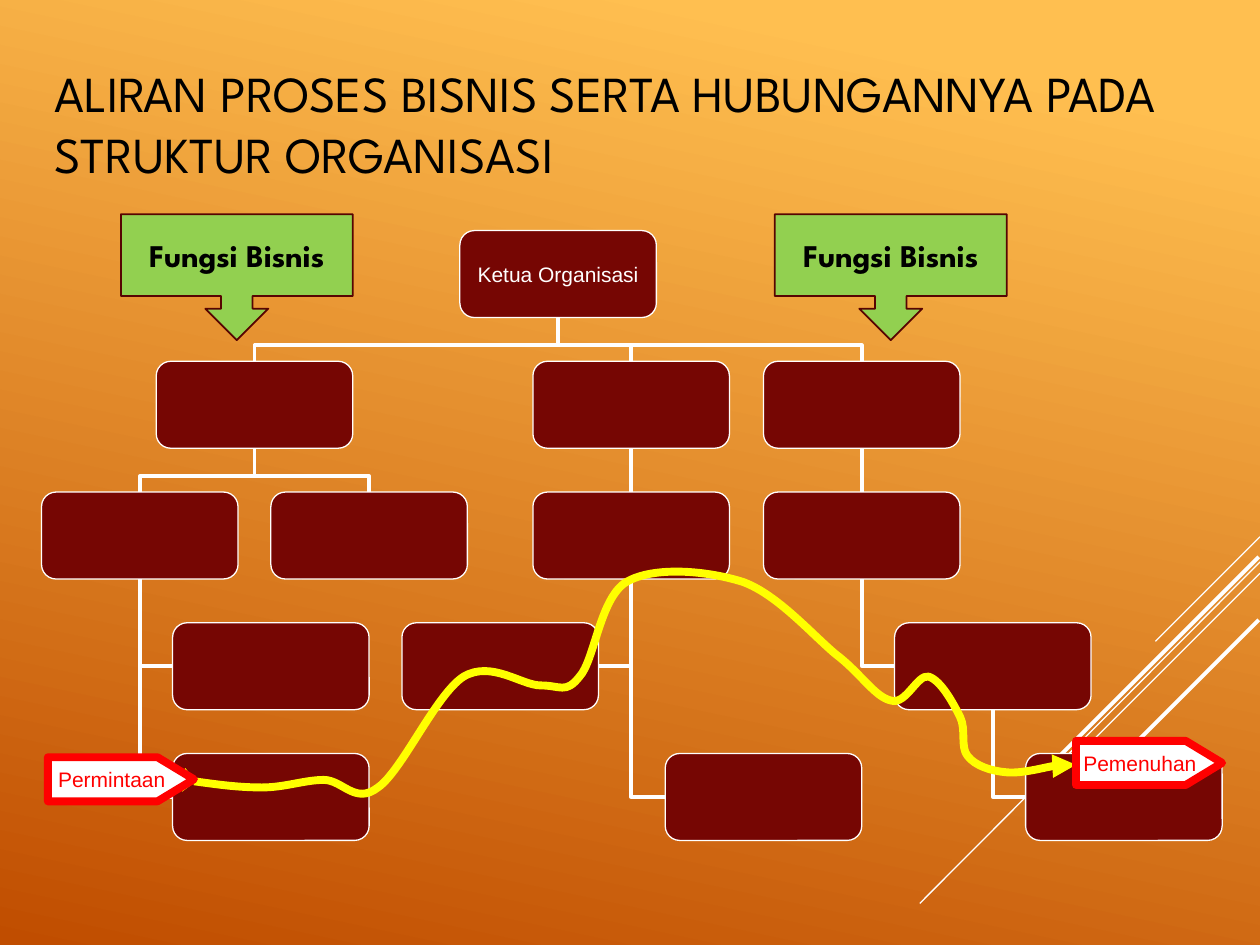
from dataclasses import dataclass

from lxml import etree
from pptx import Presentation
from pptx.dml.color import RGBColor
from pptx.enum.shapes import MSO_CONNECTOR, MSO_SHAPE
from pptx.enum.text import MSO_ANCHOR, MSO_AUTO_SIZE, PP_ALIGN
from pptx.oxml.ns import qn
from pptx.util import Inches, Pt

STRAIGHT, ELBOW = MSO_CONNECTOR.STRAIGHT, MSO_CONNECTOR.ELBOW
ROUND, PLATE = MSO_SHAPE.ROUNDED_RECTANGLE, MSO_SHAPE.PENTAGON
CALLOUT = MSO_SHAPE.DOWN_ARROW_CALLOUT
MIDDLE, NO_FIT = MSO_ANCHOR.MIDDLE, MSO_AUTO_SIZE.NONE
LEFT, CENTER = PP_ALIGN.LEFT, PP_ALIGN.CENTER
TOP, BOTTOM = 0, 2


@dataclass
class Theme:
    light: str = "FFBF50"
    dark: str = "C04D00"
    white: str = "FFFFFF"
    black: str = "000000"
    maroon: str = "760603"
    edge: str = "570402"
    green: str = "92D050"
    red: str = "FF0000"
    yellow: str = "FFFF00"
    body: str = "Arial"
    display: str = "League Spartan"
    head: float = 28.8
    call: float = 18
    label: float = 12
    thin: float = 0.75
    rim: float = 1
    wire: float = 2.25
    thick: float = 4.5


class Board:
    def __init__(self, slide, theme):
        self.slide = slide
        self.shapes = slide.shapes
        self.theme = theme

    def color(self, value):
        return RGBColor.from_string(value)

    def stroke(self, item, color, width):
        item.line.color.rgb = self.color(color)
        item.line.width = Pt(width)

    def words(self, frame, text, font, size, color, align=CENTER, bold=False):
        frame.text = text
        frame.vertical_anchor = MIDDLE
        para = frame.paragraphs[0]
        para.alignment = align
        style = para.runs[0].font
        style.name, style.size, style.bold = font, Pt(size), bold
        style.color.rgb = self.color(color)

    def ground(self):
        fill = self.slide.background.fill
        fill.gradient()
        fill.gradient_angle = 360 - 102
        ends = ((0.1, self.theme.light), (1, self.theme.dark))
        for stop, (place, color) in zip(fill.gradient_stops, ends):
            stop.position = place
            stop.color.rgb = self.color(color)

    def title(self, text):
        holder = self.shapes.title
        holder.left, holder.top = Inches(0.33), Inches(0.25)
        holder.width, holder.height = Inches(9.31), Inches(1.45)
        holder.text_frame.auto_size = NO_FIT
        t = self.theme
        self.words(holder.text_frame, text, t.display, t.head, t.black, LEFT)

    def shape(self, kind, left, top, width, height, fill, line, weight):
        item = self.shapes.add_shape(
            kind, Inches(left), Inches(top), Inches(width), Inches(height))
        item.shadow.inherit = False
        item.fill.solid()
        item.fill.fore_color.rgb = self.color(fill)
        self.stroke(item, line, weight)
        return item

    def box(self, left, row, text=""):
        t = self.theme
        item = self.shape(ROUND, left, 1.83 + 1.0375 * row, 1.56, 0.69,
                          t.maroon, t.white, t.thin)
        if text:
            frame = item.text_frame
            frame.margin_left = frame.margin_right = 0
            frame.margin_top = frame.margin_bottom = 0
            frame.word_wrap = False
            self.words(frame, text, t.body, t.label, t.white)
        return item

    def tag(self, left, top, text):
        t = self.theme
        item = self.shape(PLATE, left, top, 1.16, 0.35, t.white, t.red, t.thick)
        item.adjustments[0] = 0.826
        item.text_frame.word_wrap = False
        self.words(item.text_frame, text, t.body, t.label, t.red)

    def callout(self, left, text):
        t = self.theme
        item = self.shape(CALLOUT, left, 1.7, 1.84, 1, t.green, t.edge, t.rim)
        self.words(item.text_frame, text, t.display, t.call, t.black, bold=True)

    def line(self, kind, start, end, width):
        item = self.shapes.add_connector(kind, *start, *end)
        self.stroke(item, self.theme.white, width)
        etree.SubElement(item.element.spPr, qn("a:effectLst"))
        return item

    def ray(self, start, end, width):
        self.line(STRAIGHT, map(Inches, start), map(Inches, end), width)

    def drop(self, child, boss):
        start = child.left + child.width // 2, child.top
        end = boss.left + boss.width // 2, boss.top + boss.height
        wide, high = abs(start[0] - end[0]), start[1] - end[1]
        if not wide:
            item = self.line(STRAIGHT, start, end, self.theme.wire)
            item.begin_connect(child, TOP)
            item.end_connect(boss, BOTTOM)
            return
        mid, level = (start[0] + end[0]) // 2, (start[1] + end[1]) // 2
        sides = [mid - high // 2, mid + high // 2]
        right = start[0] > end[0]
        if right:
            sides.reverse()
        item = self.line(ELBOW, (sides[0], level - wide // 2),
                         (sides[1], level + wide // 2), self.theme.wire)
        props = item.element.spPr
        turn = 90 if right else 270
        props.find(qn("a:xfrm")).set("rot", str(turn * 60000))
        guides = props.find(qn("a:prstGeom")).get_or_add_avLst()
        etree.SubElement(guides, qn("a:gd"), name="adj1", fmla="val 36200")

    def hang(self, child, boss):
        stem = boss.left + boss.width // 2
        side = child.left if child.left > stem else child.left + child.width
        item = self.line(ELBOW, (side, child.top + child.height // 2),
                         (stem, boss.top + boss.height), self.theme.wire)
        item.element.spPr.find(qn("a:prstGeom")).set("prst", "bentConnector2")

    def curve(self, points):
        spots = [(Inches(x), Inches(y)) for x, y in points]
        pen = self.shapes.build_freeform(*spots[0])
        pen.add_line_segments(spots[1:], close=False)
        item = pen.convert_to_shape()
        item.shadow.inherit = False
        item.fill.background()
        self.stroke(item, self.theme.yellow, self.theme.thick)
        steps = list(item.element.iter(qn("a:lnTo")))
        for i in range(0, len(steps), 3):
            bend = etree.Element(qn("a:cubicBezTo"))
            steps[i].addprevious(bend)
            for step in steps[i:i + 3]:
                bend.append(step[0])
                step.getparent().remove(step)
        stroke = item.element.spPr.find(qn("a:ln"))
        etree.SubElement(stroke, qn("a:headEnd"), type="diamond")
        etree.SubElement(stroke, qn("a:tailEnd"), type="triangle")


RAYS = [
    ((10, 4.26), (9.17, 5.09), "thin"),
    ((10, 4.46), (7.3, 7.17), "thin"),
    ((10, 4.55), (8.28, 6.27), "thin"),
    ((9.99, 4.42), (8.42, 5.99), "wire"),
    ((9.99, 4.92), (8.85, 6.06), "wire"),
]
NODES = {
    "chief": (3.65, 0, "Ketua Organisasi"),
    "west": (1.24, 1), "mid": (4.23, 1), "east": (6.06, 1),
    "west1": (0.33, 2), "west2": (2.15, 2), "mid1": (4.23, 2), "east1": (6.06, 2),
    "staff1": (1.37, 3), "staff2": (3.19, 3), "staff3": (7.1, 3),
    "staff4": (1.37, 4), "staff5": (5.28, 4), "staff6": (8.14, 4),
}
DROPS = [("west", "chief"), ("mid", "chief"), ("east", "chief"),
         ("west1", "west"), ("west2", "west"), ("mid1", "mid"), ("east1", "east")]
HANGS = [("staff1", "west1"), ("staff4", "west1"), ("staff2", "mid1"),
         ("staff5", "mid1"), ("staff3", "east1"), ("staff6", "staff3")]
FLOW = [
    (1.46, 6.19), (1.68, 6.22), (1.89, 6.25), (2.08, 6.25),
    (2.26, 6.25), (2.42, 6.19), (2.57, 6.19), (2.72, 6.19), (2.82, 6.39), (3, 6.25),
    (3.19, 6.12), (3.46, 5.51), (3.68, 5.37), (3.9, 5.24), (4.14, 5.44), (4.29, 5.44),
    (4.45, 5.44), (4.49, 5.51), (4.6, 5.37), (4.72, 5.24), (4.76, 4.75), (4.97, 4.62),
    (5.19, 4.49), (5.62, 4.53), (5.9, 4.62), (6.17, 4.72), (6.44, 5.03), (6.63, 5.19),
    (6.83, 5.34), (6.94, 5.53), (7.07, 5.56), (7.19, 5.6), (7.28, 5.35), (7.37, 5.37),
    (7.47, 5.4), (7.57, 5.59), (7.62, 5.69), (7.67, 5.79), (7.62, 5.93), (7.68, 6),
    (7.74, 6.08), (7.87, 6.12), (7.99, 6.13), (8.11, 6.14), (8.33, 6.08), (8.42, 6.07),
    (8.51, 6.06), (8.53, 6.06), (8.54, 6.07),
]


def main():
    deck = Presentation()
    deck.slide_width, deck.slide_height = Inches(10), Inches(7.5)
    theme = Theme()
    board = Board(deck.slides.add_slide(deck.slide_layouts[5]), theme)
    board.ground()
    widths = {"thin": theme.thin, "wire": theme.wire}
    for start, end, width in RAYS:
        board.ray(start, end, widths[width])
    board.title("ALIRAN PROSES BISNIS SERTA HUBUNGANNYA PADA STRUKTUR ORGANISASI")
    nodes = {name: board.box(*spot) for name, spot in NODES.items()}
    for child, boss in DROPS:
        board.drop(nodes[child], nodes[boss])
    for child, boss in HANGS:
        board.hang(nodes[child], nodes[boss])
    board.curve(FLOW)
    board.tag(0.38, 6.01, "Permintaan")
    board.tag(8.54, 5.88, "Pemenuhan")
    for left in (0.96, 6.15):
        board.callout(left, "Fungsi Bisnis")
    deck.save("out.pptx")


if __name__ == "__main__":
    main()
